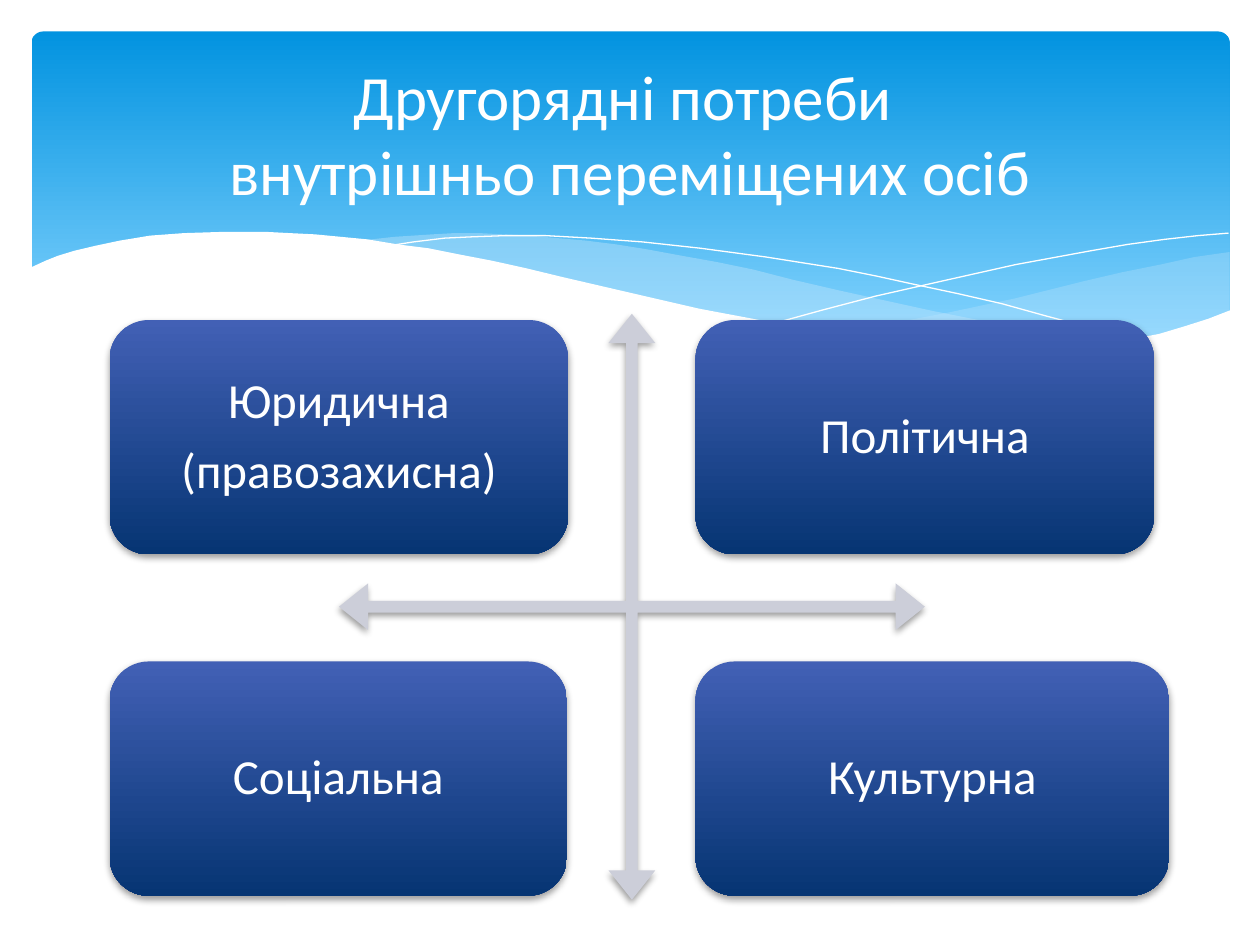
import pptx
import pptx.util
import pptx.dml.color
import pptx.enum.shapes
import pptx.enum.text
import pptx.oxml
import pptx.oxml.ns

Inches, Pt = pptx.util.Inches, pptx.util.Pt
SHAPE = pptx.enum.shapes.MSO_SHAPE

COLORS = {
    "white": "FFFFFF", "black": "000000", "mist": "C6E7FC", "arrow": "CCCED9",
    "sky_top": "0293E0", "sky_bottom": "83D3FE",
    "box_top": "4260B5", "box_bottom": "063573",
}
FONT = "Calibri"
TITLE = "Другорядні потреби \nвнутрішньо переміщених осіб"

# text lines, column, row, width
NEEDS = [
    (["Юридична", "(правозахисна)"], 0, 0, 3.64),
    (["Політична"], 1, 0, 3.64),
    (["Соціальна"], 0, 1, 3.63),
    (["Культурна"], 1, 1, 3.76),
]
COLUMNS, ROWS, BOX_HEIGHT = (0.87, 5.52), (2.54, 5.25), 1.86

RIGHT_MIST = [
    (9.76, 2), (9.48, 2.04), (9.21, 2.1), (8.91, 2.16), (8.61, 2.23), (8.05, 2.37),
    (7.53, 2.48), (7.06, 2.57), (6.61, 2.65), (6.91, 2.69), (7.19, 2.72), (7.45, 2.75),
    (7.69, 2.77), (8.03, 2.78), (8.35, 2.77), (8.63, 2.75), (8.89, 2.72), (9.13, 2.67),
    (9.35, 2.62), (9.49, 2.57), (9.63, 2.52), (9.76, 2.47),
]
LEFT_MIST = [
    (8.93, 2.73), (8.66, 2.69), (8.07, 2.6), (7.41, 2.47), (6.68, 2.31), (6.29, 2.22),
    (5.98, 2.14), (5.69, 2.08), (5.41, 2.03), (5.14, 1.98), (4.89, 1.94), (4.65, 1.91),
    (4.42, 1.89), (4.2, 1.87), (3.99, 1.86), (3.8, 1.85), (3.61, 1.85), (3.44, 1.86),
    (3.13, 1.88), (2.86, 1.91), (3.23, 1.96), (3.62, 2.03), (4.04, 2.11), (4.49, 2.22),
    (4.91, 2.32), (5.3, 2.4), (5.66, 2.48), (6.01, 2.55), (6.34, 2.61), (6.65, 2.66),
    (6.95, 2.7), (7.22, 2.74), (7.48, 2.76), (7.73, 2.77), (7.96, 2.78), (8.28, 2.78),
    (8.57, 2.77), (8.76, 2.75),
]
FALLING_LINE = [
    (3.09, 1.95), (3.28, 1.92), (3.53, 1.89), (3.74, 1.88), (4.01, 1.87), (4.33, 1.87),
    (4.69, 1.89), (5.1, 1.92), (5.56, 1.97), (6.08, 2.04), (6.65, 2.13), (6.95, 2.19),
    (7.27, 2.26), (7.6, 2.33), (7.95, 2.41), (8.31, 2.51), (8.69, 2.61), (9.07, 2.72),
]
RISING_LINE = [
    (6.13, 2.57), (6.53, 2.46), (6.95, 2.35), (7.48, 2.23), (8.06, 2.1), (8.66, 1.99),
    (8.95, 1.94), (9.24, 1.9), (9.51, 1.87), (9.75, 1.85),
]
WHITE_WAVE = [
    (9.77, 2.46), (9.59, 2.53), (9.4, 2.59), (9.2, 2.65), (8.99, 2.69), (8.75, 2.73),
    (8.5, 2.75), (8.23, 2.77), (7.93, 2.76), (7.61, 2.75), (7.26, 2.72), (6.88, 2.68),
    (6.48, 2.62), (6.03, 2.54), (5.55, 2.45), (5.03, 2.33), (4.47, 2.2), (4.18, 2.13),
    (3.91, 2.07), (3.65, 2.02), (3.4, 1.97), (3.16, 1.94), (2.92, 1.9), (2.71, 1.88),
    (2.5, 1.86), (2.3, 1.85), (2.11, 1.84), (1.77, 1.84), (1.46, 1.85), (1.19, 1.87),
    (0.95, 1.91), (0.76, 1.95), (0.59, 1.99), (0.46, 2.03), (0.36, 2.07), (0.23, 2.13),
    (0.23, 3.29), (9.77, 3.29),
]


def rgb(name):
    return pptx.dml.color.RGBColor.from_string(COLORS[name])


def fill_solid(shape, color, alpha=100):
    shape.fill.solid()
    shape.fill.fore_color.rgb = rgb(color)
    if alpha < 100:
        tint = shape._element.spPr.find(".//" + pptx.oxml.ns.qn("a:srgbClr"))
        tint.append(pptx.oxml.parse_xml(
            f'<a:alpha {pptx.oxml.ns.nsdecls("a")} val="{alpha * 1000}"/>'))


def fill_gradient(shape, top, bottom, end=1.0):
    shape.fill.gradient()
    shape.fill.gradient_angle = 270
    for stop, color, position in zip(shape.fill.gradient_stops, (top, bottom), (0, end)):
        stop.color.rgb = rgb(color)
        stop.position = position


def add_soft_shadow(shape):
    shape._element.spPr.append(pptx.oxml.parse_xml(
        f'<a:effectLst {pptx.oxml.ns.nsdecls("a")}>'
        f'<a:outerShdw blurRad="{Pt(4)}" dist="{Pt(2)}" dir="5400000" rotWithShape="0">'
        f'<a:srgbClr val="{COLORS["black"]}"><a:alpha val="38000"/></a:srgbClr>'
        '</a:outerShdw></a:effectLst>'))


def add_preset(page, kind, left, top, width, height, adjustments=(), shadow=False):
    shape = page.shapes.add_shape(
        kind, Inches(left), Inches(top), Inches(width), Inches(height))
    for index, value in enumerate(adjustments):
        shape.adjustments[index] = value
    shape.line.fill.background()
    if shadow:
        add_soft_shadow(shape)
    else:
        shape.shadow.inherit = False
    return shape


def add_wave(page, points, closed=True):
    start, *rest = [(Inches(x), Inches(y)) for x, y in points]
    builder = page.shapes.build_freeform(*start)
    builder.add_line_segments(rest, close=closed)
    wave = builder.convert_to_shape()
    wave.shadow.inherit = False
    if closed:
        wave.line.fill.background()
    else:
        wave.fill.background()
        wave.line.color.rgb = rgb("white")
        wave.line.width = Pt(0)
    return wave


def write(shape, paragraphs, size, inset_x, inset_y, line_spacing=None, space_after=None):
    frame = shape.text_frame
    frame.word_wrap = True
    frame.vertical_anchor = pptx.enum.text.MSO_ANCHOR.MIDDLE
    frame.margin_left = frame.margin_right = Inches(inset_x)
    frame.margin_top = frame.margin_bottom = Inches(inset_y)
    for number, text in enumerate(paragraphs):
        para = frame.add_paragraph() if number else frame.paragraphs[0]
        para.alignment = pptx.enum.text.PP_ALIGN.CENTER
        para.line_spacing = line_spacing
        para.space_after = space_after
        for row, line in enumerate(text.split("\n")):
            if row:
                para.add_line_break()
            span = para.add_run()
            span.text = line
            span.font.size = Pt(size)
            span.font.name = FONT
            span.font.color.rgb = rgb("white")


def main():
    deck = pptx.Presentation()
    deck.slide_width, deck.slide_height = Inches(10), Inches(7.5)
    page = deck.slides.add_slide(deck.slide_layouts[6])

    banner = add_preset(page, SHAPE.ROUNDED_RECTANGLE, 0.25, 0.25, 9.51, 2.7, [0.034])
    fill_gradient(banner, "sky_top", "sky_bottom", end=0.9)
    fill_solid(add_wave(page, RIGHT_MIST), "mist", alpha=29)
    fill_solid(add_wave(page, LEFT_MIST), "mist", alpha=40)
    for points in (FALLING_LINE, RISING_LINE):
        add_wave(page, points, closed=False)
    fill_solid(add_wave(page, WHITE_WAVE), "white")

    title = page.shapes.add_textbox(Inches(0.5), Inches(0.37), Inches(9), Inches(1.37))
    write(title, [TITLE], size=36, inset_x=0.1, inset_y=0.05)

    cross = add_preset(page, SHAPE.QUAD_ARROW, 2.69, 2.49, 4.65, 4.65,
                       [0.02, 0.04, 0.05], shadow=True)
    fill_solid(cross, "arrow")
    for lines, column, row, width in NEEDS:
        box = add_preset(page, SHAPE.ROUNDED_RECTANGLE, COLUMNS[column], ROWS[row],
                         width, BOX_HEIGHT, shadow=True)
        fill_gradient(box, "box_top", "box_bottom")
        write(box, lines, size=28, inset_x=0.21, inset_y=0.21,
              line_spacing=0.9, space_after=Pt(9.8))

    deck.save("out.pptx")


if __name__ == "__main__":
    main()
